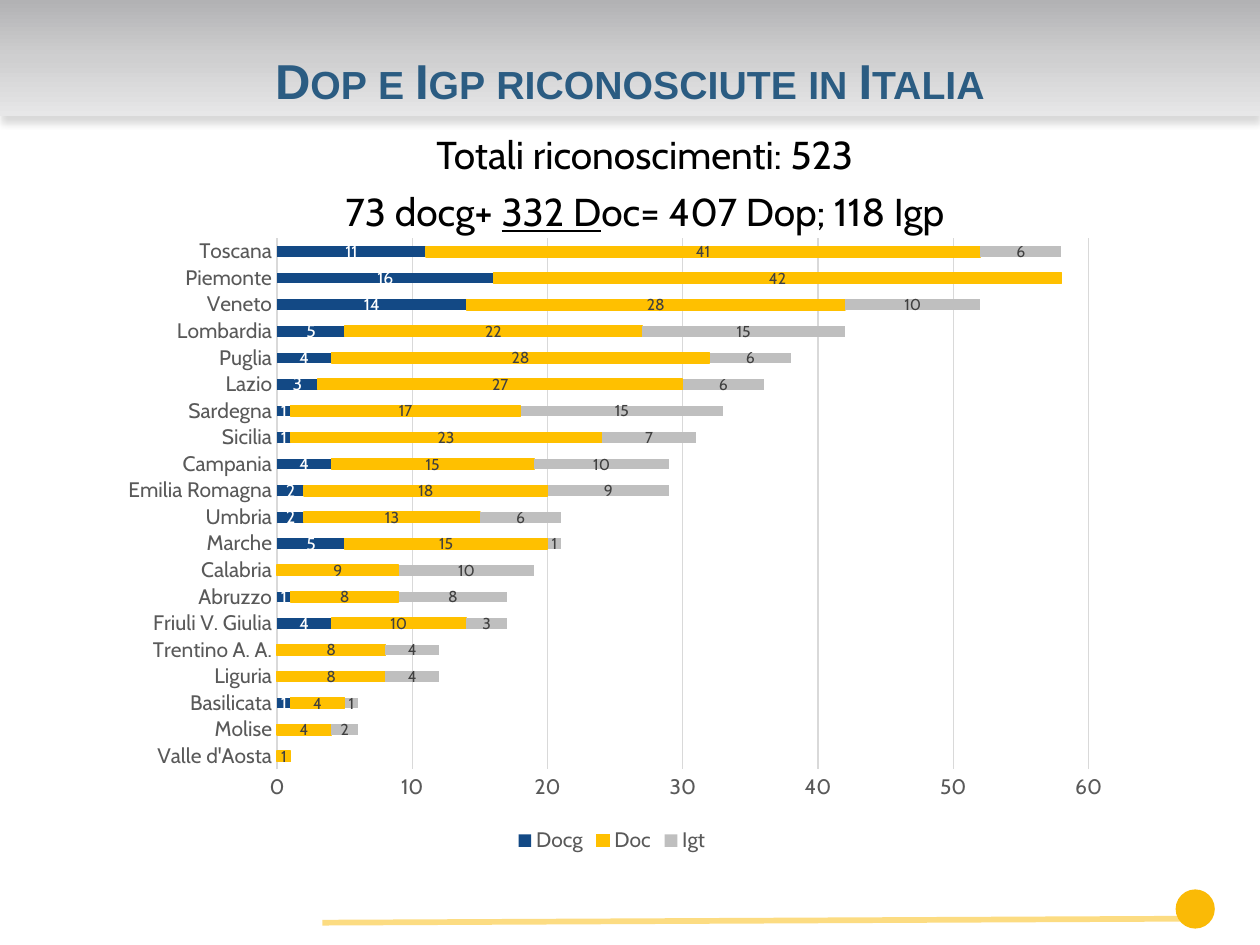
"""Builds the slide on recognised Dop and Igp wines by Italian region."""
from lxml import etree
from pptx import Presentation, util as u
from pptx.chart.data import CategoryChartData
from pptx.dml.color import RGBColor
from pptx.enum import chart as ch, shapes, text
from pptx.oxml import parse_xml

NS = 'xmlns:a="http://schemas.openxmlformats.org/drawingml/2006/main" xmlns:c="http://schemas.openxmlformats.org/drawingml/2006/chart"'
A = "{http://schemas.openxmlformats.org/drawingml/2006/main}"


def rgb(value):
    return RGBColor.from_string(value)


def style(font, color, **values):
    font.color.rgb = rgb(color)
    for key, value in values.items():
        setattr(font, key, value)


prs = Presentation()
prs.slide_width, prs.slide_height = u.Cm(25.4), u.Cm(19.05)
s = prs.slides.add_slide(prs.slide_layouts[5])

title = s.shapes.title
title.left, title.top, title.width, title.height = 0, 0, u.Cm(25.4), u.Cm(2.34)
stops = "".join(f'<a:gs pos="{pos}000"><a:srgbClr val="{color}"/></a:gs>'
                for pos, color in ((0, "B2B2B4"), (50, "CFCFD0"), (100, "E7E7E8")))
sp_pr = title._element.spPr
sp_pr.append(parse_xml(f'<a:prstGeom {NS} prst="rect"><a:avLst/></a:prstGeom>'))
sp_pr.append(parse_xml(f'<a:gradFill {NS}><a:gsLst>{stops}</a:gsLst><a:lin ang="5400000" scaled="0"/></a:gradFill>'))
sp_pr.append(parse_xml(f'<a:effectLst {NS}><a:outerShdw blurRad="50800" dist="50800" dir="5400000">'
                       '<a:srgbClr val="D9D9D9"/></a:outerShdw></a:effectLst>'))
tf = title.text_frame
tf.text = "Dop e Igp riconosciute in Italia"
tf.vertical_anchor, tf.auto_size = text.MSO_ANCHOR.BOTTOM, text.MSO_AUTO_SIZE.NONE
p = tf.paragraphs[0]
p.alignment = text.PP_ALIGN.CENTER
r = p.runs[0]
style(r.font, "2B5C82", name="Arial", size=u.Pt(28), bold=True)
r.font._element.set("cap", "small")

dot = s.shapes.add_shape(shapes.MSO_SHAPE.OVAL, u.Cm(23.7), u.Cm(17.93), u.Cm(0.79), u.Cm(0.79))
dot.shadow.inherit = False
dot.fill.solid()
dot.fill.fore_color.rgb = rgb("FABA06")
dot.line.fill.background()

rule = s.shapes.add_connector(shapes.MSO_CONNECTOR.STRAIGHT, u.Cm(6.5), u.Cm(18.6), u.Cm(23.9), u.Cm(18.52))
rule.line.color.rgb, rule.line.width = rgb("FABA06"), u.Pt(3.25)
etree.SubElement(next(rule._element.spPr.iter(A + "srgbClr")), A + "alpha", val="49000")
etree.SubElement(rule._element.spPr, A + "effectLst")

tf = s.shapes.add_textbox(u.Cm(0.3), u.Cm(2.51), u.Cm(25.4), u.Cm(2)).text_frame
tf.word_wrap = True
lines = [[("Totali riconoscimenti: 523", False)],
         [("73 docg+ ", False), ("332 D", True), ("oc= 407 Dop; 118 Igp", False)]]
for i, runs in enumerate(lines):
    p = tf.add_paragraph() if i else tf.paragraphs[0]
    p.alignment, p.space_before = text.PP_ALIGN.CENTER, u.Pt(6 * i)
    for words, underline in runs:
        r = p.add_run()
        r.text = words
        style(r.font, "000000", name="Cabin", size=u.Pt(22.2), underline=underline)

regions = [
    ("Valle d'Aosta", None, 1, None), ("Molise", None, 4, 2), ("Basilicata", 1, 4, 1),
    ("Liguria", None, 8, 4), ("Trentino A. A.", None, 8, 4), ("Friuli V. Giulia", 4, 10, 3),
    ("Abruzzo", 1, 8, 8), ("Calabria", None, 9, 10), ("Marche", 5, 15, 1), ("Umbria", 2, 13, 6),
    ("Emilia Romagna", 2, 18, 9), ("Campania", 4, 15, 10), ("Sicilia", 1, 23, 7),
    ("Sardegna", 1, 17, 15), ("Lazio", 3, 27, 6), ("Puglia", 4, 28, 6), ("Lombardia", 5, 22, 15),
    ("Veneto", 14, 28, 10), ("Piemonte", 16, 42, None), ("Toscana", 11, 41, 6),
]
names, *columns = zip(*regions)
formats = [("Docg", "134985", "FFFFFF", 10), ("Doc", "FFC000", "404040", 9), ("Igt", "BFBFBF", "404040", 9)]
data = CategoryChartData()
data.categories = names
for (name, *_), values in zip(formats, columns):
    data.add_series(name, values)
chart = s.shapes.add_chart(ch.XL_CHART_TYPE.BAR_STACKED, u.Cm(2.11), u.Cm(4.55),
                           u.Cm(20.45), u.Cm(12.75), data).chart
style(chart.font, "000000", name="Cabin", size=u.Pt(10))
chart.has_title = False
chart.has_legend = True
chart.legend.position, chart.legend.include_in_layout = ch.XL_LEGEND_POSITION.BOTTOM, False

plot = chart.plots[0]
plot.gap_width, plot.overlap, plot.vary_by_categories = 150, 100, False
for series, (_, color, label_color, size) in zip(plot.series, formats):
    series.format.fill.solid()
    series.format.fill.fore_color.rgb = rgb(color)
    labels = series.data_labels
    labels.show_value = True
    style(labels.font, label_color, name="Cabin", size=u.Pt(size))
doc_line = plot.series[1].format.line
doc_line.color.rgb, doc_line.width = rgb("FFC000"), u.Pt(0.75)

cat, val = chart.category_axis, chart.value_axis
for font in (cat.tick_labels.font, val.tick_labels.font, chart.legend.font):
    style(font, "595959", name="Cabin", size=u.Pt(12))
for axis in (cat, val):
    axis.major_tick_mark = axis.minor_tick_mark = ch.XL_TICK_MARK.NONE
val.minimum_scale, val.maximum_scale, val.major_unit = 0, 60, 10
val.has_major_gridlines = True
val.format.line.fill.background()
for line, width in ((cat.format.line, 1), (val.major_gridlines.format.line, 0.75)):
    line.color.rgb, line.width = rgb("D9D9D9"), u.Pt(width)

area = chart._chartSpace.chart.plotArea
for old in area.findall("{*}layout"):
    area.remove(old)
box = "".join(f'<c:{key} val="{value}"/>' for key, value in (
    ("layoutTarget", "inner"), ("xMode", "edge"), ("yMode", "edge"),
    ("x", 0.17), ("y", 0.02), ("w", 0.8), ("h", 0.84)))
area.insert(0, parse_xml(f"<c:layout {NS}><c:manualLayout>{box}</c:manualLayout></c:layout>"))

prs.save("out.pptx")
